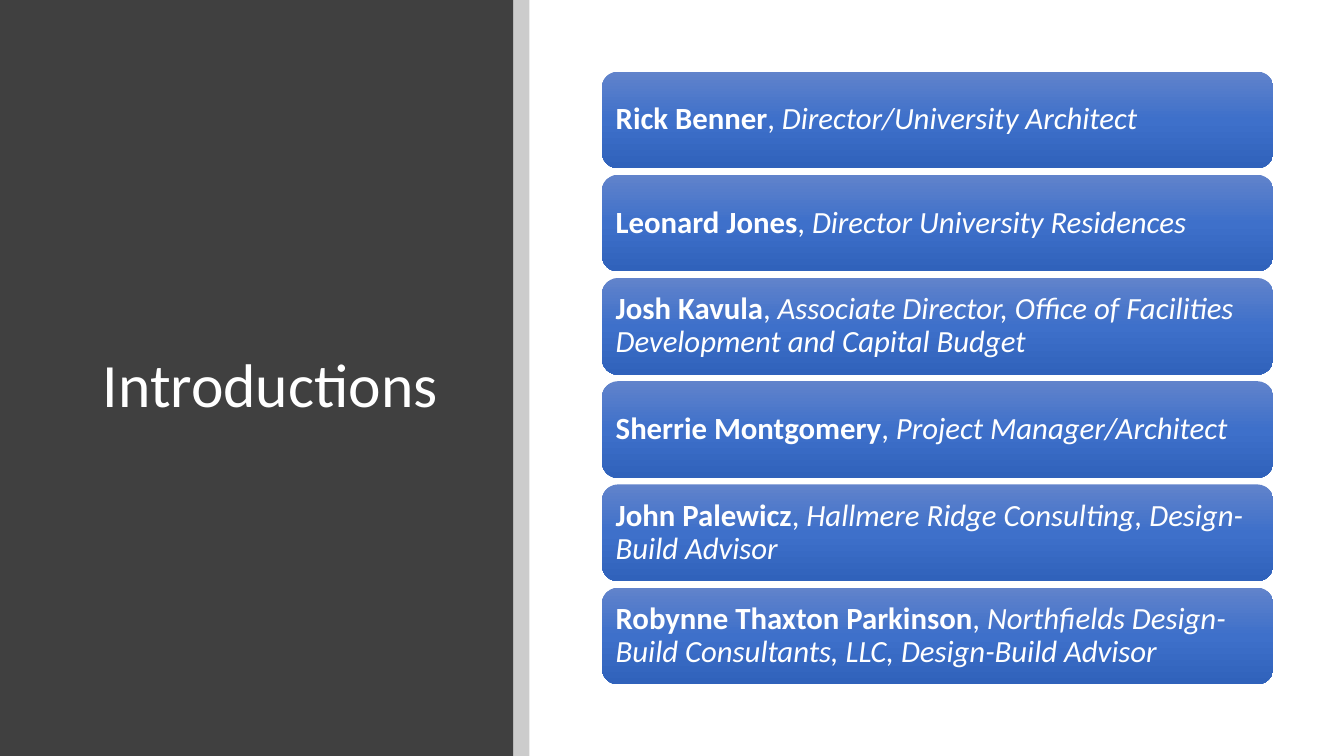
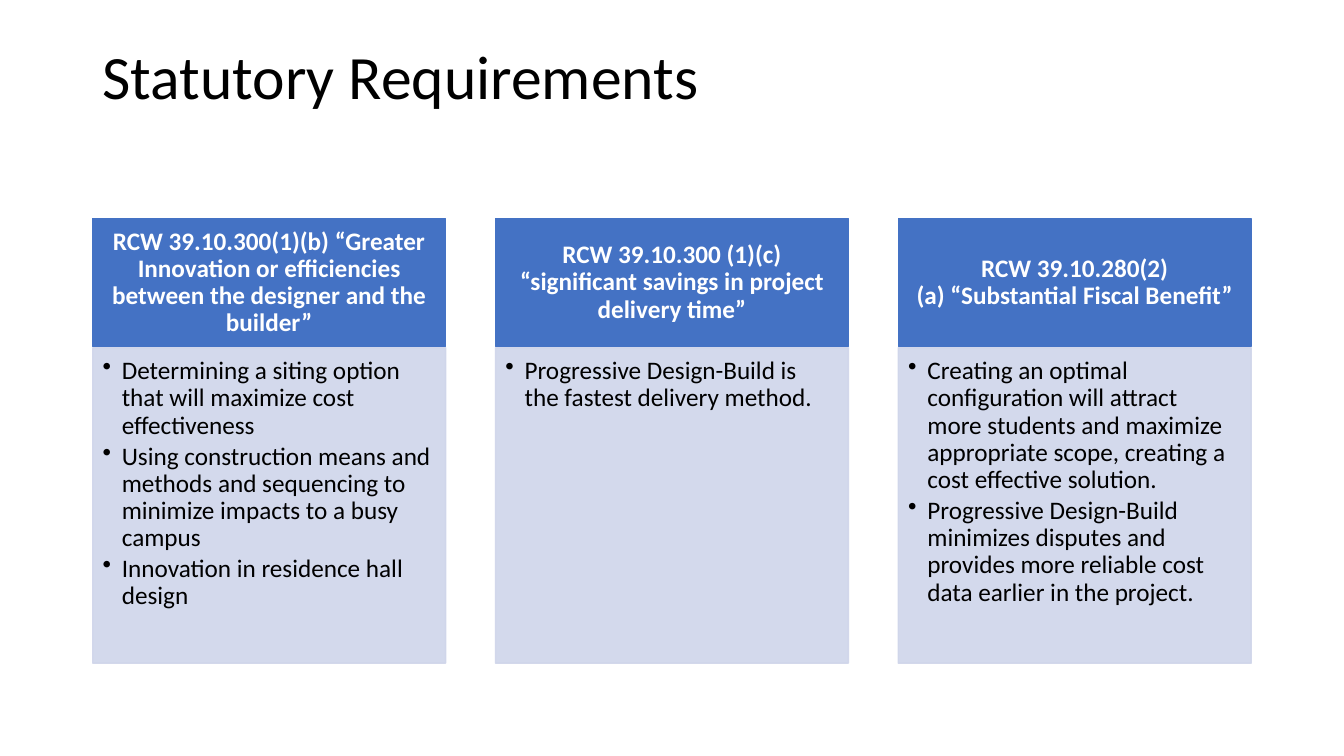
from copy import deepcopy
from dataclasses import dataclass

from lxml.etree import SubElement
from pptx import Presentation
from pptx.dml.color import RGBColor
from pptx.enum.shapes import MSO_SHAPE
from pptx.enum.text import MSO_ANCHOR, PP_ALIGN
from pptx.oxml.ns import qn
from pptx.util import Inches, Pt


@dataclass(frozen=True)
class Theme:
    font: str = "Calibri"
    white: str = "FFFFFF"
    black: str = "000000"
    panel: str = "404040"
    accent: str = "4472C4"
    pale: str = "CFD5EA"
    gradient: tuple = ((0, "6183CB"), (0.5, "3E70CA"), (1, "3062BB"))
    title_size: int = 44
    card_size: int = 22
    column_size: int = 18
    line_spacing: float = 0.9
    bullet_gap: float = 2.7


class Deck:
    def __init__(self, theme):
        self.theme = theme
        self.prs = Presentation()
        self.prs.slide_width = Inches(13.33)
        self.prs.slide_height = Inches(7.5)
        self.s = None

    def new_slide(self):
        self.s = self.prs.slides.add_slide(self.prs.slide_layouts[6])

    # Shapes
    def shape(self, kind, x, y, w, h):
        sp = self.s.shapes.add_shape(kind, Inches(x), Inches(y), Inches(w), Inches(h))
        sp.shadow.inherit = False
        sp.line.fill.background()
        return sp

    def box(self, x, y, w, h, color, alpha=100, outlined=False):
        sp = self.shape(MSO_SHAPE.RECTANGLE, x, y, w, h)
        sp.fill.solid()
        sp.fill.fore_color.rgb = RGBColor.from_string(color)
        if outlined:
            sp.line.color.rgb = RGBColor.from_string(color)
            sp.line.width = Pt(1)
        if alpha < 100:
            for clr in sp._element.spPr.iter(qn("a:srgbClr")):
                SubElement(clr, qn("a:alpha"), val=str(alpha * 1000))
        return sp

    def gradient_card(self, x, y, w, h):
        sp = self.shape(MSO_SHAPE.ROUNDED_RECTANGLE, x, y, w, h)
        sp.fill.gradient()
        sp.fill.gradient_angle = 270
        # The default gradient has two stops; a third goes in between
        stops = sp._element.spPr.find(".//" + qn("a:gsLst"))
        stops.insert(1, deepcopy(stops[0]))
        for stop, (position, color) in zip(sp.fill.gradient_stops, self.theme.gradient):
            stop.position = position
            stop.color.rgb = RGBColor.from_string(color)
        return sp

    # Text
    def frame(self, sp, insets, anchor=MSO_ANCHOR.MIDDLE):
        tf = sp.text_frame
        tf.word_wrap = True
        tf.vertical_anchor = anchor
        (tf.margin_left, tf.margin_top,
         tf.margin_right, tf.margin_bottom) = [Inches(i) for i in insets]
        return tf

    def paragraph(self, tf, first=True, align=PP_ALIGN.LEFT):
        p = tf.paragraphs[0] if first else tf.add_paragraph()
        p.alignment = align
        p.line_spacing = self.theme.line_spacing
        return p

    def run(self, p, text, size, color, bold=False, italic=False):
        r = p.add_run()
        r.text = text
        r.font.name = self.theme.font
        r.font.size = Pt(size)
        r.font.bold = bold
        r.font.italic = italic
        r.font.color.rgb = RGBColor.from_string(color)

    def bullet(self, p):
        pPr = p._p.get_or_add_pPr()
        pPr.set("marL", str(Inches(0.19)))
        pPr.set("indent", str(-Inches(0.19)))
        SubElement(pPr, qn("a:buChar"), char="•")

    # Slide parts
    def title(self, text, x, y, w, h, color):
        sp = self.s.shapes.add_textbox(Inches(x), Inches(y), Inches(w), Inches(h))
        p = self.paragraph(self.frame(sp, (0.1, 0.05, 0.1, 0.05)))
        self.run(p, text, self.theme.title_size, color)

    def person(self, name, role, y):
        t = self.theme
        sp = self.gradient_card(5.97, y, 6.66, 0.96)
        p = self.paragraph(self.frame(sp, (0.09, 0.09, 0.09, 0.09)))
        self.run(p, name, t.card_size, t.white, bold=True)
        self.run(p, ", ", t.card_size, t.white)
        self.run(p, role, t.card_size, t.white, italic=True)

    def column(self, heading_lines, points, x, w):
        t = self.theme
        head = self.box(x, 2.17, w, 1.27, t.accent, outlined=True)
        p = self.paragraph(self.frame(head, (0.14, 0.08, 0.14, 0.08)),
                           align=PP_ALIGN.CENTER)
        for i, line in enumerate(heading_lines):
            if i:
                p.add_line_break()
            self.run(p, line, t.column_size, t.white, bold=True)

        body = self.box(x, 3.45, w, 3.13, t.pale, alpha=90, outlined=True)
        tf = self.frame(body, (0.1, 0.1, 0.14, 0.16), MSO_ANCHOR.TOP)
        for i, point in enumerate(points):
            p = self.paragraph(tf, first=i == 0)
            p.space_after = Pt(t.bullet_gap)
            self.bullet(p)
            self.run(p, point, t.column_size, t.black)


PEOPLE = [
    ("Rick Benner", "Director/University Architect"),
    ("Leonard Jones", "Director University Residences"),
    ("Josh Kavula", "Associate Director, Office of Facilities Development and Capital Budget"),
    ("Sherrie Montgomery", "Project Manager/Architect"),
    ("John Palewicz", "Hallmere Ridge Consulting, Design-Build Advisor"),
    ("Robynne Thaxton Parkinson",
     "Northfields Design-Build Consultants, LLC, Design-Build Advisor"),
]

REQUIREMENTS = [
    (["RCW 39.10.300(1)(b) “Greater Innovation or efficiencies "
      "between the designer and the builder”"],
     ["Determining a siting option that will maximize cost effectiveness",
      "Using construction means and methods and sequencing to minimize impacts "
      "to a busy campus",
      "Innovation in residence hall design"]),
    (["RCW 39.10.300 (1)(c) “significant savings in project delivery time”"],
     ["Progressive Design-Build is the fastest delivery method."]),
    (["RCW 39.10.280(2)", "(a) “Substantial Fiscal Benefit”"],
     ["Creating an optimal configuration will attract more students and maximize "
      "appropriate scope, creating a cost effective solution.",
      "Progressive Design-Build minimizes disputes and provides more reliable cost "
      "data earlier in the project."]),
]


def introductions(deck):
    t = deck.theme
    deck.new_slide()
    deck.box(0, 0, 5.09, 7.5, t.panel)
    deck.title("Introductions", 0.92, 0.89, 3.65, 5.91, t.white)
    deck.box(5.09, 0, 0.16, 7.5, t.black, alpha=20)
    top, bottom = 0.71, 5.83
    step = (bottom - top) / (len(PEOPLE) - 1)
    for i, (name, role) in enumerate(PEOPLE):
        deck.person(name, role, top + i * step)


def statutory_requirements(deck):
    deck.new_slide()
    deck.title("Statutory Requirements", 0.92, 0.4, 11.5, 0.78, deck.theme.black)
    left, right = 0.92, 8.91
    step = (right - left) / (len(REQUIREMENTS) - 1)
    for i, (heading_lines, points) in enumerate(REQUIREMENTS):
        deck.column(heading_lines, points, left + i * step, 3.5)


def main():
    deck = Deck(Theme())
    introductions(deck)
    statutory_requirements(deck)
    deck.prs.save("out.pptx")


if __name__ == "__main__":
    main()
